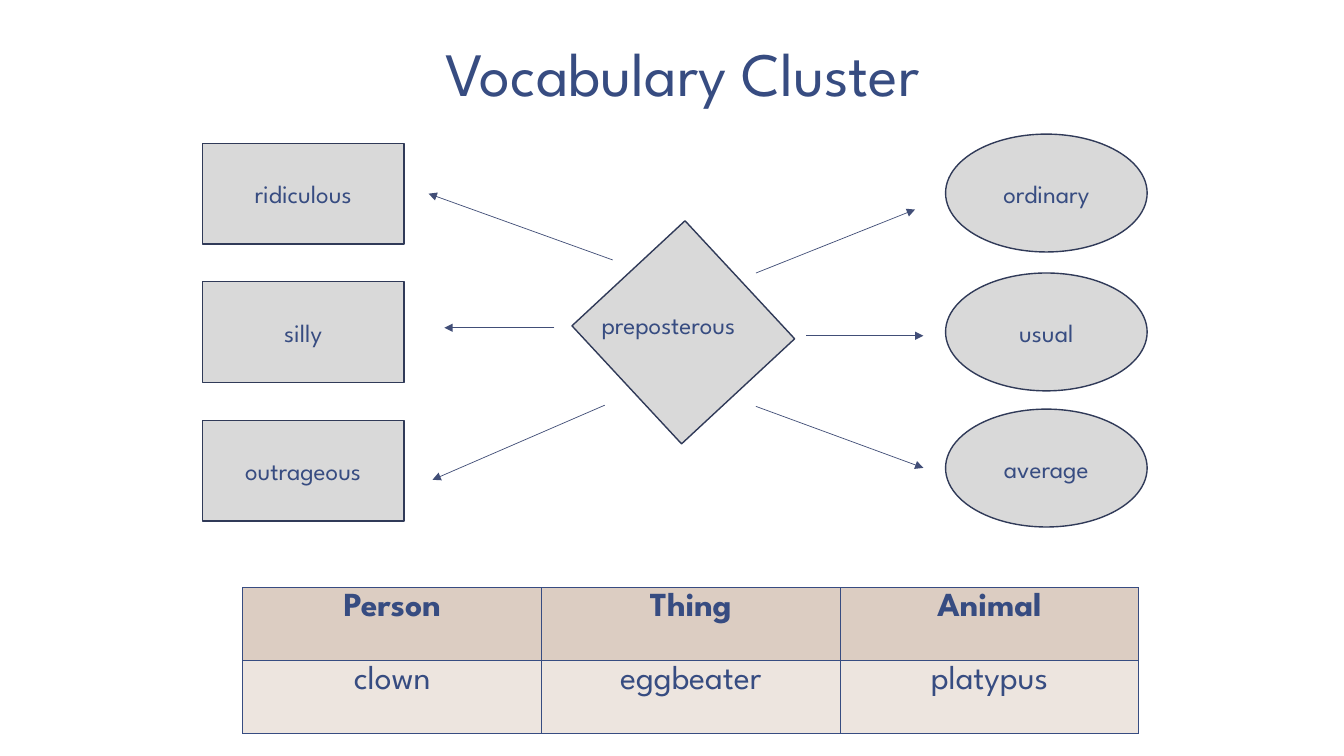
from dataclasses import dataclass

from lxml import etree
from pptx import Presentation
from pptx.dml.color import RGBColor
from pptx.enum.shapes import MSO_CONNECTOR, MSO_SHAPE
from pptx.enum.text import MSO_ANCHOR, MSO_AUTO_SIZE, PP_ALIGN
from pptx.oxml.ns import qn
from pptx.util import Cm, Pt

RECTANGLE, OVAL = MSO_SHAPE.RECTANGLE, MSO_SHAPE.OVAL
STRAIGHT = MSO_CONNECTOR.STRAIGHT
LEFT, CENTER = PP_ALIGN.LEFT, PP_ALIGN.CENTER
MIDDLE, BOTTOM = MSO_ANCHOR.MIDDLE, MSO_ANCHOR.BOTTOM
TITLE_ONLY = 5


@dataclass(frozen=True)
class Theme:
    font: str = "League Spartan"
    background: str = "FFFFFF"
    text: str = "374C81"
    shape_fill: str = "D9D9D9"
    outline: str = "303A58"
    arrow: str = "414E77"
    header_fill: str = "DCCDC2"
    body_fill: str = "EDE5DF"
    title_size: int = 44
    table_size: int = 24
    label_size: int = 18
    outline_width: float = 1
    arrow_width: float = 0.5


THEME = Theme()

# Cluster content and positions in centimetres
SYNONYMS = [("ridiculous", 3.61), ("silly", 7.1), ("outrageous", 10.59)]
ANTONYMS = [("ordinary", 3.38), ("usual", 6.88), ("average", 10.31)]
ARROWS = [
    (15.44, 6.55, 10.8, 4.88),
    (13.97, 8.26, 11.2, 8.26),
    (15.24, 10.21, 10.9, 12.09),
    (19.05, 6.88, 23.06, 5.28),
    (20.32, 8.46, 23.27, 8.46),
    (19.05, 10.24, 23.27, 11.79),
]
EXAMPLES = [("Person", "Thing", "Animal"), ("clown", "eggbeater", "platypus")]


def color(value):
    return RGBColor.from_string(value)


def write_text(frame, text, size, align=CENTER, bold=False):
    frame.text = text
    para = frame.paragraphs[0]
    para.alignment = align
    font = para.runs[0].font
    font.name = THEME.font
    font.size = Pt(size)
    font.bold = bold
    font.color.rgb = color(THEME.text)
    return para


def add_title(page, text):
    title = page.shapes.title
    title.left, title.top = Cm(3.1), Cm(0.2)
    title.width, title.height = Cm(28.22), Cm(2.74)
    frame = title.text_frame
    frame.vertical_anchor = BOTTOM
    frame.margin_left = frame.margin_right = Cm(0.33)
    frame.margin_top = frame.margin_bottom = Cm(0.18)
    write_text(frame, text, THEME.title_size).line_spacing = 0.85


def add_shape(page, kind, left, top, width, height, text=""):
    shape = page.shapes.add_shape(kind, Cm(left), Cm(top), Cm(width), Cm(height))
    shape.shadow.inherit = False
    shape.fill.solid()
    shape.fill.fore_color.rgb = color(THEME.shape_fill)
    shape.line.color.rgb = color(THEME.outline)
    shape.line.width = Pt(THEME.outline_width)
    if text:
        shape.text_frame.vertical_anchor = MIDDLE
        write_text(shape.text_frame, text, THEME.label_size)
    return shape


def add_label(page, text, left, top, width, height):
    box = page.shapes.add_textbox(Cm(left), Cm(top), Cm(width), Cm(height))
    frame = box.text_frame
    frame.word_wrap = True
    frame.auto_size = MSO_AUTO_SIZE.SHAPE_TO_FIT_TEXT
    write_text(frame, text, THEME.label_size, LEFT)


def add_arrow(page, *ends):
    arrow = page.shapes.add_connector(STRAIGHT, *map(Cm, ends))
    arrow.line.color.rgb = color(THEME.arrow)
    arrow.line.width = Pt(THEME.arrow_width)
    outline = arrow.line._get_or_add_ln()
    etree.SubElement(outline, qn("a:tailEnd"), type="triangle")
    etree.SubElement(outline.getparent(), qn("a:effectLst"))


def add_borders(cell):
    properties = cell._tc.get_or_add_tcPr()
    for side in ("a:lnL", "a:lnR", "a:lnT", "a:lnB"):
        border = etree.SubElement(properties, qn(side), w=str(Pt(THEME.outline_width)))
        fill = etree.SubElement(border, qn("a:solidFill"))
        etree.SubElement(fill, qn("a:srgbClr"), val=THEME.text)


def add_table(page, rows, left, top, width, height):
    table = page.shapes.add_table(
        len(rows), len(rows[0]), Cm(left), Cm(top), Cm(width), Cm(height)
    ).table
    for row_index, words in enumerate(rows):
        header = row_index == 0
        for column_index, word in enumerate(words):
            cell = table.cell(row_index, column_index)
            # Borders must precede the fill in the cell properties
            add_borders(cell)
            cell.fill.solid()
            cell.fill.fore_color.rgb = color(
                THEME.header_fill if header else THEME.body_fill
            )
            write_text(cell.text_frame, word, THEME.table_size, bold=header)


def main():
    deck = Presentation()
    deck.slide_width, deck.slide_height = Cm(33.87), Cm(19.05)
    page = deck.slides.add_slide(deck.slide_layouts[TITLE_ONLY])
    page.background.fill.solid()
    page.background.fill.fore_color.rgb = color(THEME.background)
    add_title(page, "Vocabulary Cluster")

    # Central word on a turned square
    add_shape(page, RECTANGLE, 15.19, 6.43, 4.06, 3.89).rotation = 47.1
    add_label(page, "preposterous", 14.91, 7.67, 4.55, 1.02)

    # Similar words on the left, opposites on the right
    for word, top in SYNONYMS:
        add_shape(page, RECTANGLE, 5.1, top, 5.08, 2.54, word)
    for word, top in ANTONYMS:
        add_shape(page, OVAL, 23.83, top, 5.08, 2.97, word)
    for ends in ARROWS:
        add_arrow(page, *ends)

    # Examples
    add_table(page, EXAMPLES, 6.12, 14.81, 22.58, 3.68)
    deck.save("out.pptx")


if __name__ == "__main__":
    main()
